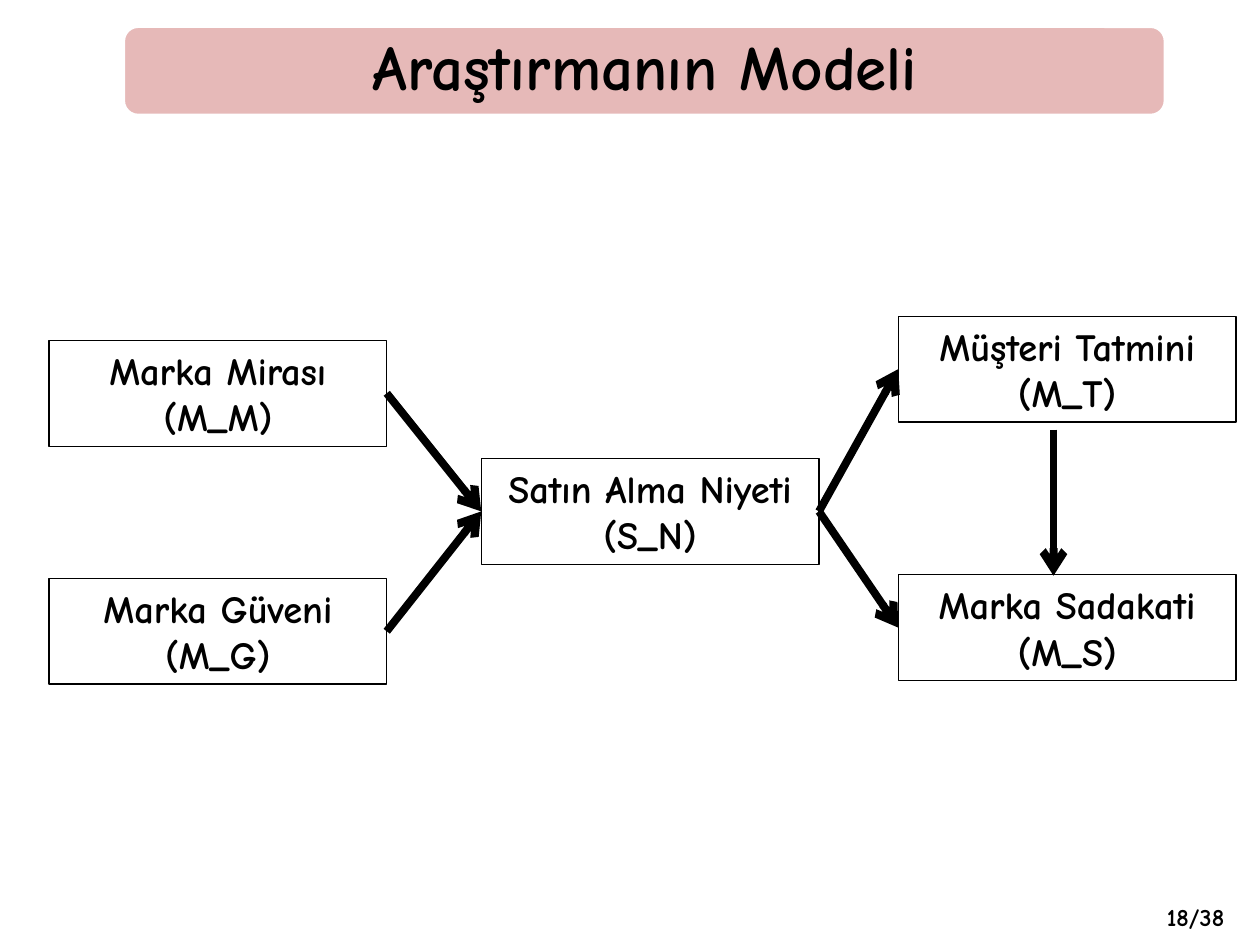
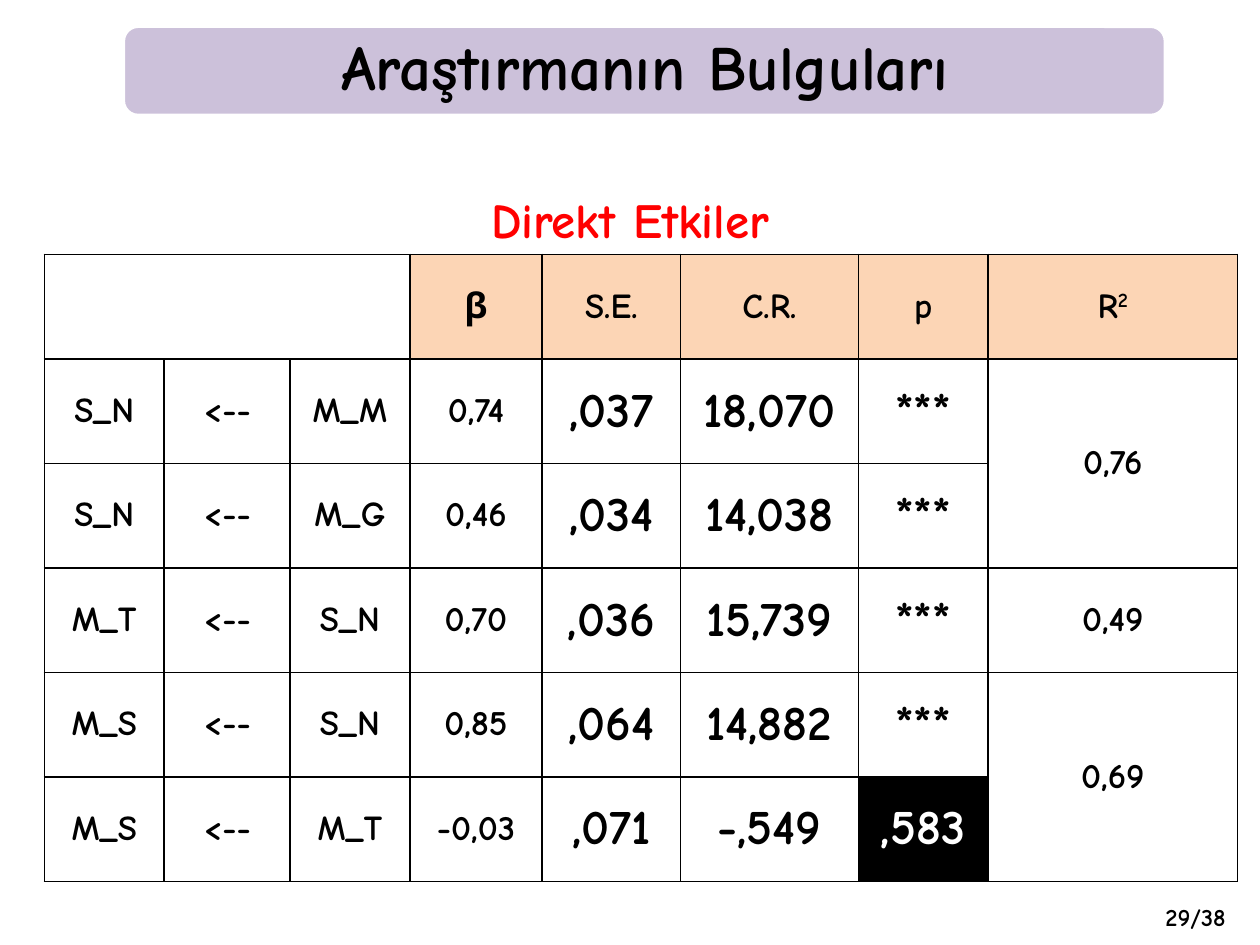
from lxml import etree
from pptx import Presentation
from pptx import util as u
from pptx.dml.color import RGBColor
from pptx.enum import shapes, text
from pptx.oxml import ns

FONT = "Comic Neue"
BLACK, WHITE, RED = "000000", "FFFFFF", "FF0000"
PINK, LILAC, PEACH = "E6B9B8", "CCC1DA", "FCD5B5"

BOX_SIZE = (193, 60.5)
VARIABLES = {
    "M_G": ("Marka Güveni", 28, 330.5),
    "M_M": ("Marka Mirası", 28, 194.5),
    "S_N": ("Satın Alma Niyeti", 275, 262),
    "M_T": ("Müşteri Tatmini", 513.3, 180.7),
    "M_S": ("Marka Sadakati", 513.3, 328.4),
}
PATHS = [("M_M", "S_N"), ("M_G", "S_N"), ("S_N", "M_T"), ("S_N", "M_S")]
LOYALTY_ARROW = (602, 245.5, 602, 329)

HEADINGS = ["β", "S.E.", "C.R.", "p", "R"]
EFFECTS = [
    ("S_N", "M_M", "0,74", ",037", "18,070", "***"),
    ("S_N", "M_G", "0,46", ",034", "14,038", "***"),
    ("M_T", "S_N", "0,70", ",036", "15,739", "***"),
    ("M_S", "S_N", "0,85", ",064", "14,882", "***"),
    ("M_S", "M_T", "-0,03", ",071", "-,549", ",583"),
]
R_SQUARED = [(1, 2, "0,76"), (3, 3, "0,49"), (4, 5, "0,69")]
COLUMN_WIDTHS = [68.4, 72, 68.4, 75.6, 79.2, 101.5, 74.2, 142.5]
ROW_HEIGHT = 59.7
FIRST_LARGE_COLUMN = 4


def color(value):
    return RGBColor.from_string(value)


def lengths(*values):
    return [u.Pt(value) for value in values]


def write(frame, words, size=20, ink=BLACK, spacing=None, superscript=""):
    paragraph = frame.paragraphs[0]
    paragraph.alignment = text.PP_ALIGN.CENTER
    if spacing:
        paragraph.line_spacing = spacing
    for part in filter(None, (words, superscript)):
        run = paragraph.add_run()
        run.text = part
        run.font.name, run.font.size, run.font.bold = FONT, u.Pt(size), True
        run.font.color.rgb = color(ink)
    if superscript:
        run._r.get_or_add_rPr().set("baseline", "30000")


def add_label(slide, words, place, wrap=False, **style):
    frame = slide.shapes.add_textbox(*lengths(*place)).text_frame
    frame.word_wrap = wrap
    write(frame, words, **style)
    return frame


def add_box(slide, kind, place, line, width, fill=None):
    shape = slide.shapes.add_shape(kind, *lengths(*place))
    shape.shadow.inherit = False
    if fill:
        shape.fill.solid()
        shape.fill.fore_color.rgb = color(fill)
    else:
        shape.fill.background()
    shape.line.color.rgb = color(line)
    shape.line.width = u.Pt(width)
    return shape


def add_arrow(slide, points):
    arrow = slide.shapes.add_connector(shapes.MSO_CONNECTOR.STRAIGHT, *lengths(*points))
    arrow.line.color.rgb = color(BLACK)
    arrow.line.width = u.Pt(4.5)
    etree.SubElement(arrow.line._get_or_add_ln(), ns.qn("a:tailEnd"), type="arrow")
    etree.SubElement(arrow._element.spPr, ns.qn("a:effectLst"))
    return arrow


def add_page(presentation, title, band, number):
    slide = presentation.slides.add_slide(presentation.slide_layouts[6])
    add_label(slide, number, (649.4, 512, 67.7, 24.5), size=14)
    add_box(slide, shapes.MSO_SHAPE.ROUNDED_RECTANGLE, (70.5, 15, 595.5, 51), WHITE, 2, band)
    frame = add_label(slide, title, (73.4, 17.3, 590.4, 46), wrap=True, size=36, spacing=0.9)
    frame.vertical_anchor = text.MSO_ANCHOR.MIDDLE
    frame.margin_left = frame.margin_right = u.Pt(10.8)
    frame.margin_top = frame.margin_bottom = u.Pt(10.8)
    return slide


def add_model(slide):
    width, height = BOX_SIZE
    boxes = {}
    for code, (name, left, top) in VARIABLES.items():
        box = add_box(slide, shapes.MSO_SHAPE.RECTANGLE, (left, top, width, height), BLACK, 0.75)
        write(box.text_frame, f"{name} ({code})", size=22)
        boxes[code] = box
    for cause, effect in PATHS:
        arrow = add_arrow(slide, (0, 0, 0, 0))
        arrow.begin_connect(boxes[cause], 3)
        arrow.end_connect(boxes[effect], 1)
    add_arrow(slide, LOYALTY_ARROW)


def add_borders(cell):
    properties = cell._tc.get_or_add_tcPr()
    for side in ("lnL", "lnR", "lnT", "lnB"):
        line = etree.SubElement(properties, ns.qn(f"a:{side}"), w=str(u.Pt(1)))
        fill = etree.SubElement(line, ns.qn("a:solidFill"))
        etree.SubElement(fill, ns.qn("a:srgbClr"), val=BLACK)


def fill_cell(cell, words, fill=None, **style):
    cell.vertical_anchor = text.MSO_ANCHOR.MIDDLE
    if fill:
        cell.fill.solid()
        cell.fill.fore_color.rgb = color(fill)
    write(cell.text_frame, words, **style)


def add_effects_table(slide):
    rows, columns = len(EFFECTS) + 1, len(COLUMN_WIDTHS)
    place = lengths(25.4, 145.4, sum(COLUMN_WIDTHS), rows * ROW_HEIGHT)
    table = slide.shapes.add_table(rows, columns, *place).table
    table.first_row = table.horz_banding = False
    for column, width in zip(table.columns, COLUMN_WIDTHS):
        column.width = u.Pt(width)
    for row in table.rows:
        row.height = u.Pt(ROW_HEIGHT)
    for cell in table.iter_cells():
        add_borders(cell)
        cell.fill.background()

    table.cell(0, 0).merge(table.cell(0, 2))
    for column, heading in enumerate(HEADINGS, start=3):
        power = "2" if heading == "R" else ""
        fill_cell(table.cell(0, column), heading, PEACH, superscript=power)
    for row, (effect, *values) in enumerate(EFFECTS, start=1):
        for column, value in enumerate([effect, "<--", *values]):
            size = 28 if column >= FIRST_LARGE_COLUMN else 20
            rejected = value == ",583"
            fill_cell(table.cell(row, column), value, BLACK if rejected else None,
                      size=size, ink=WHITE if rejected else BLACK)
    for first, last, value in R_SQUARED:
        cell = table.cell(first, columns - 1)
        if last > first:
            cell.merge(table.cell(last, columns - 1))
        fill_cell(cell, value)


def main():
    presentation = Presentation()
    presentation.slide_width, presentation.slide_height = lengths(720, 540)
    add_model(add_page(presentation, "Araştırmanın Modeli", PINK, "18/38"))
    findings = add_page(presentation, "Araştırmanın Bulguları", LILAC, "29/38")
    add_effects_table(findings)
    add_label(findings, "Direkt Etkiler", (257.8, 100, 204.5, 43), size=28, ink=RED, spacing=1.14)
    presentation.save("out.pptx")


if __name__ == "__main__":
    main()
